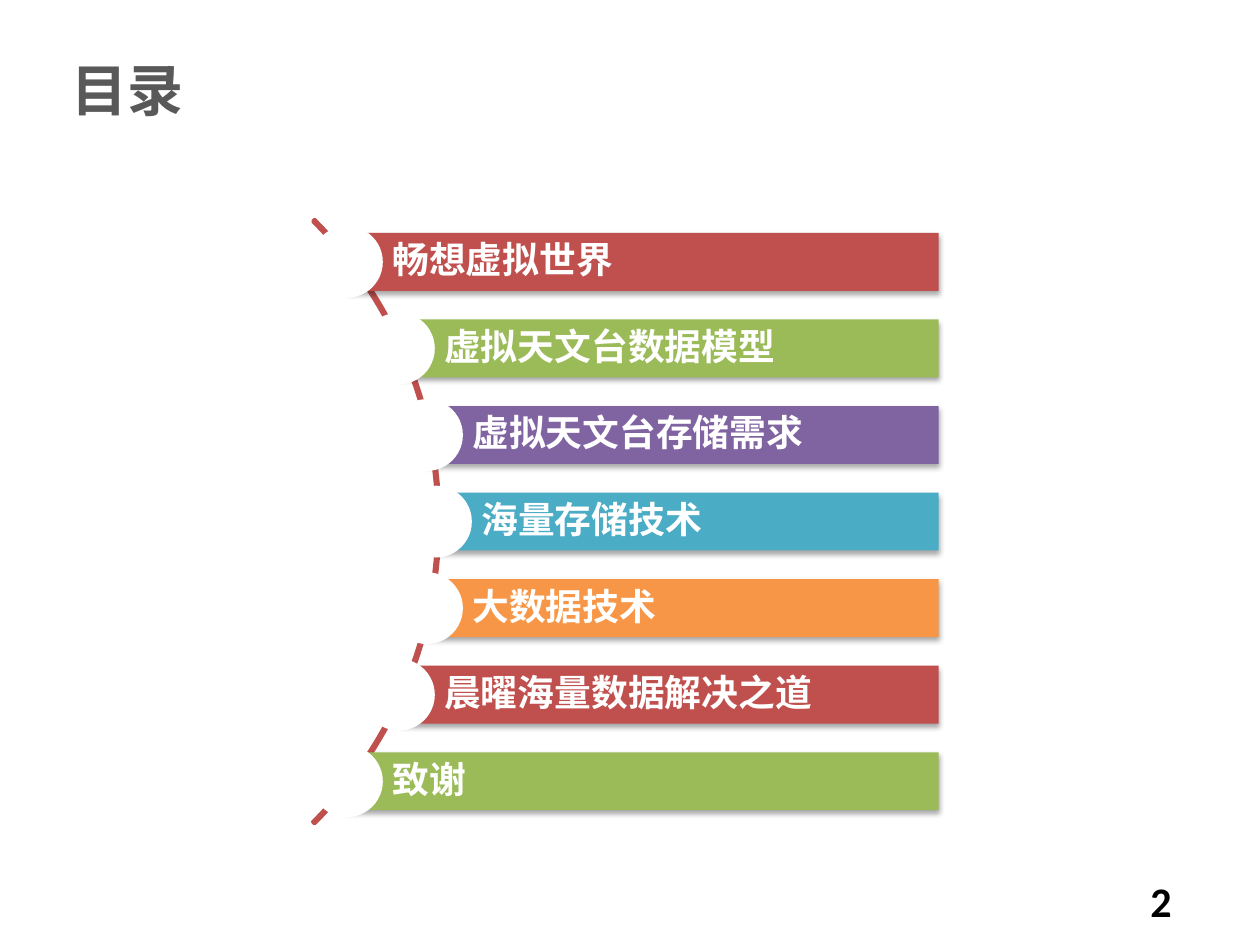
import math

from lxml import etree
from pptx import Presentation
from pptx.dml.color import RGBColor
from pptx.enum import shapes, text
from pptx.oxml import ns
from pptx.util import Inches, Pt

TOPICS = [
    ("畅想虚拟世界", "C0504D"),
    ("虚拟天文台数据模型", "9BBB59"),
    ("虚拟天文台存储需求", "8064A2"),
    ("海量存储技术", "4BACC6"),
    ("大数据技术", "F79646"),
    ("晨曜海量数据解决之道", "C0504D"),
    ("致谢", "9BBB59"),
]
ARC_X, ARC_Y, ARC_R = 0.1, 4.14, 3.39
NODE_R, NODE_ORBIT = 0.285, 3.36
BAR_RIGHT, BAR_H, PITCH = 7.45, 0.46, 0.687


def rgb(value):
    """Return the colour for a hex string."""
    return RGBColor.from_string(value)


def add_run(p, content, size, color, font):
    """Add one bold run, with the font set for Latin and East Asian text."""
    r = p.add_run()
    r.text = content
    r.font.size, r.font.bold, r.font.name = Pt(size), True, font
    r.font.color.rgb = rgb(color)
    ea = etree.SubElement(r.font._element, ns.qn("a:ea"))
    ea.set("typeface", "Noto Sans CJK SC")


def add_label(s, box, content, size, color, font, align=text.PP_ALIGN.LEFT):
    """Add a single-line text box."""
    tf = s.shapes.add_textbox(*map(Inches, box)).text_frame
    tf.word_wrap = True
    p = tf.paragraphs[0]
    p.alignment = align
    add_run(p, content, size, color, font)


def add_plain(s, kind, box, fill=None):
    """Add a preset shape without outline or shadow."""
    sp = s.shapes.add_shape(kind, *map(Inches, box))
    sp.shadow.inherit = False
    sp.line.fill.background()
    if fill:
        sp.fill.solid()
        sp.fill.fore_color.rgb = rgb(fill)
    else:
        sp.fill.background()
    return sp


def add_shadow(sp):
    """Give a shape a soft shadow that falls straight down."""
    effects = sp._element.spPr.find(ns.qn("a:effectLst"))
    shadow = etree.SubElement(
        effects, ns.qn("a:outerShdw"), blurRad=str(Pt(3.1)),
        dist=str(Pt(1.8)), dir="5400000", rotWithShape="0")
    color = etree.SubElement(shadow, ns.qn("a:srgbClr"), val="000000")
    etree.SubElement(color, ns.qn("a:alpha"), val="35000")


def add_arc(s):
    """Add the thin arc that links the topics."""
    box = (ARC_X - ARC_R, ARC_Y - ARC_R, 2 * ARC_R, 2 * ARC_R)
    sp = add_plain(s, shapes.MSO_SHAPE.BLOCK_ARC, box)
    for i, value in enumerate((189, 27, 0.003)):
        sp.adjustments[i] = value
    sp.line.color.rgb = rgb("C0504D")
    sp.line.width = Pt(2)


def add_topic(s, x, y, content, color):
    """Add a topic bar with its round node centred on its left end."""
    box = (x, y - BAR_H / 2, BAR_RIGHT - x, BAR_H)
    sp = add_plain(s, shapes.MSO_SHAPE.RECTANGLE, box, color)
    add_shadow(sp)
    tf = sp.text_frame
    tf.word_wrap = True
    tf.vertical_anchor = text.MSO_ANCHOR.MIDDLE
    tf.margin_left = Inches(0.36)
    tf.margin_right = tf.margin_top = tf.margin_bottom = Inches(0.06)
    p = tf.paragraphs[0]
    p.alignment = text.PP_ALIGN.LEFT
    p.line_spacing = 0.9
    add_run(p, content, 21, "FFFFFF", "Calibri")
    node = (x - NODE_R, y - NODE_R, 2 * NODE_R, 2 * NODE_R)
    add_plain(s, shapes.MSO_SHAPE.OVAL, node, "FFFFFF")


def main():
    """Build the contents slide."""
    prs = Presentation()
    prs.slide_width, prs.slide_height = Inches(10), Inches(7.5)
    s = prs.slides.add_slide(prs.slide_layouts[6])
    add_label(s, (8.78, 6.9, 0.87, 0.5), "2", 24, "000000", "Calibri",
              text.PP_ALIGN.CENTER)
    add_label(s, (0.47, 0.39, 4.22, 0.64), "目录", 32, "595959",
              "Noto Sans CJK SC")
    add_arc(s)
    for i, (content, color) in enumerate(TOPICS):
        dy = (i - (len(TOPICS) - 1) / 2) * PITCH
        x = ARC_X + math.sqrt(NODE_ORBIT ** 2 - dy ** 2)
        add_topic(s, x, ARC_Y + dy, content, color)
    prs.save("out.pptx")


if __name__ == "__main__":
    main()
